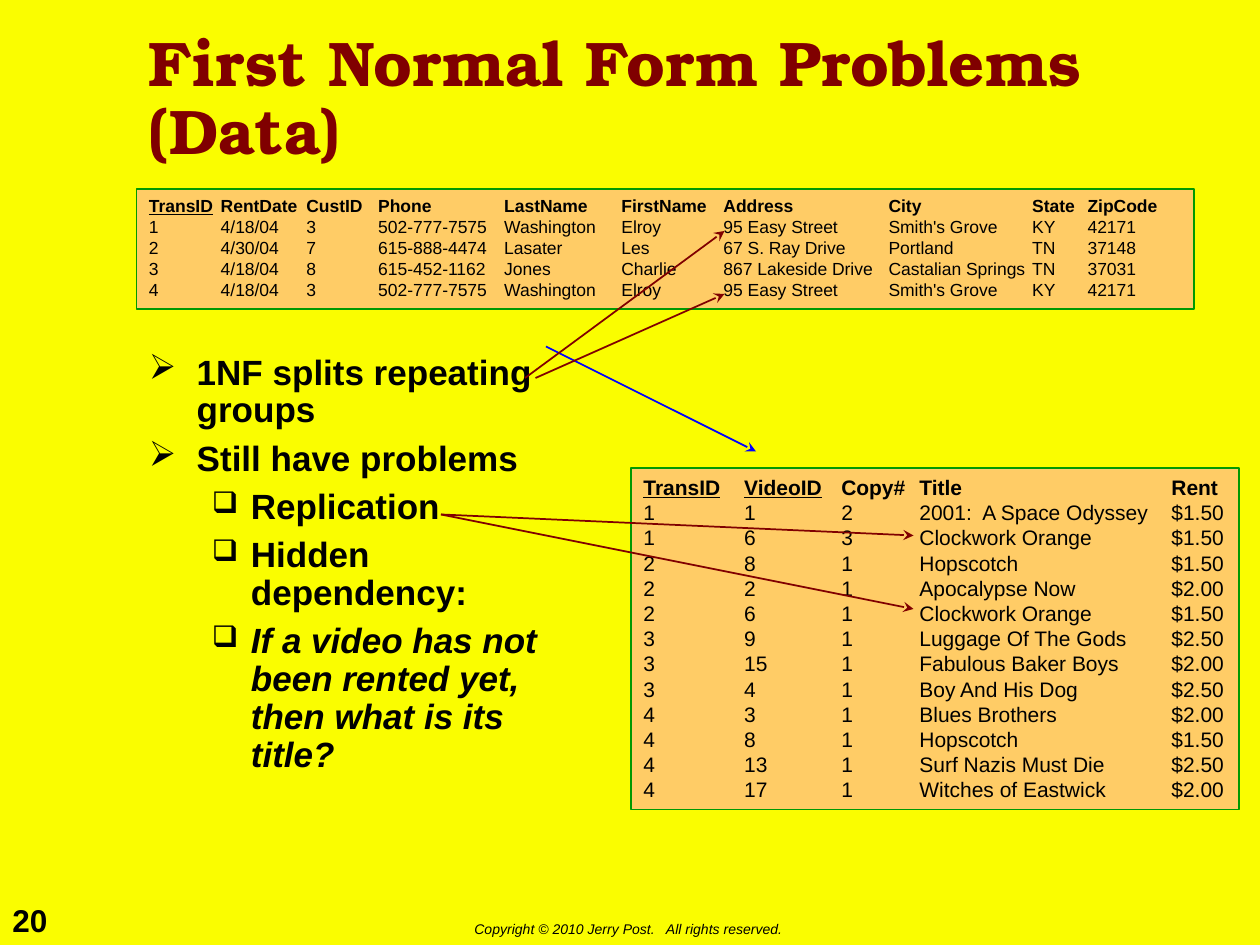
from dataclasses import dataclass

from lxml.etree import SubElement
from pptx import Presentation
from pptx.dml.color import RGBColor
from pptx.enum.shapes import MSO_CONNECTOR as Connector, MSO_SHAPE as Shape
from pptx.enum.text import MSO_ANCHOR as Anchor, MSO_AUTO_SIZE as AutoSize, PP_ALIGN as Align
from pptx.oxml.ns import qn
from pptx.util import Inches, Pt


@dataclass(frozen=True)
class Theme:
    background: str = "FAFD00"
    ink: str = "000000"
    maroon: str = "800000"
    blue: str = "0000FF"
    panel: str = "FFCC66"
    border: str = "009900"
    body_font: str = "Arial"
    title_font: str = "TeX Gyre Bonum"
    title_size: int = 36
    body_size: int = 20
    number_size: int = 18
    rentals_size: int = 10
    videos_size: int = 12
    copyright_size: int = 8


THEME = Theme()
CELL = 1 / 12  # the 10 x 7.5 inch slide is a grid of 120 columns and 90 rows

RENTALS = [
    "TransID RentDate CustID Phone LastName FirstName Address City State ZipCode".split(),
    ["1", "4/18/04", "3", "502-777-7575", "Washington", "Elroy", "95 Easy Street", "Smith's Grove", "KY", "42171"],
    ["2", "4/30/04", "7", "615-888-4474", "Lasater", "Les", "67 S. Ray Drive", "Portland", "TN", "37148"],
    ["3", "4/18/04", "8", "615-452-1162", "Jones", "Charlie", "867 Lakeside Drive", "Castalian Springs", "TN", "37031"],
    ["4", "4/18/04", "3", "502-777-7575", "Washington", "Elroy", "95 Easy Street", "Smith's Grove", "KY", "42171"],
]
RENTAL_TABS = [0.57, 1.25, 1.82, 2.82, 3.75, 4.56, 5.87, 7.01, 7.45]

VIDEOS = [
    ["TransID", "VideoID", "Copy#", "Title", "Rent"],
    ["1", "1", "2", "2001:  A Space Odyssey", "$1.50"],
    ["1", "6", "3", "Clockwork Orange", "$1.50"],
    ["2", "8", "1", "Hopscotch", "$1.50"],
    ["2", "2", "1", "Apocalypse Now", "$2.00"],
    ["2", "6", "1", "Clockwork Orange", "$1.50"],
    ["3", "9", "1", "Luggage Of The Gods", "$2.50"],
    ["3", "15", "1", "Fabulous Baker Boys", "$2.00"],
    ["3", "4", "1", "Boy And His Dog", "$2.50"],
    ["4", "3", "1", "Blues Brothers", "$2.00"],
    ["4", "8", "1", "Hopscotch", "$1.50"],
    ["4", "13", "1", "Surf Nazis Must Die", "$2.50"],
    ["4", "17", "1", "Witches of Eastwick", "$2.00"],
]
VIDEO_TABS = [0.8, 1.57, 2.19, 4.19]

# (level, text, italic)
POINTS = [
    (0, "1NF splits repeating groups", False),
    (0, "Still have problems", False),
    (1, "Replication", False),
    (1, "Hidden dependency:", False),
    (1, "If a video has not been rented yet, then what is its title?", True),
]
# per level: bullet, size in percent, text indent, hanging indent
BULLETS = [("➢", 100, 0.38, 0.38), ("❑", 85, 0.81, 0.31)]


def grid(*cells):
    return [Inches(cell * CELL) for cell in cells]


def style(run, size, color=THEME.ink, name=THEME.body_font, bold=False, italic=False, underline=False):
    font = run.font
    font.name, font.size = name, Pt(size)
    font.bold, font.italic, font.underline = bold, italic, underline
    font.color.rgb = RGBColor.from_string(color)


def add_label(slide, box, text, size, wrap=False, **look):
    """One-paragraph text box."""
    label = slide.shapes.add_textbox(*grid(*box))
    frame = label.text_frame
    frame.word_wrap = wrap
    frame.text = text
    style(frame.paragraphs[0].runs[0], size, **look)
    return frame


def add_title(slide, box):
    frame = add_label(slide, box, "First Normal Form Problems (Data)", THEME.title_size, wrap=True,
                      color=THEME.maroon, name=THEME.title_font, bold=True)
    frame.vertical_anchor = Anchor.MIDDLE
    frame.paragraphs[0].line_spacing = 0.9


def add_listing(slide, box, rows, tabs, key_count, size, wrap):
    """Framed listing with tabbed columns; the key headings are underlined."""
    panel = slide.shapes.add_shape(Shape.RECTANGLE, *grid(*box))
    panel.shadow.inherit = False
    panel.fill.solid()
    panel.fill.fore_color.rgb = RGBColor.from_string(THEME.panel)
    panel.line.color.rgb = RGBColor.from_string(THEME.border)
    panel.line.width = Pt(1)
    frame = panel.text_frame
    frame.word_wrap = wrap
    frame.auto_size = AutoSize.SHAPE_TO_FIT_TEXT
    frame.vertical_anchor = Anchor.TOP
    for index, row in enumerate(rows):
        line = frame.paragraphs[0] if index == 0 else frame.add_paragraph()
        tab_list = SubElement(line._p.get_or_add_pPr(), qn("a:tabLst"))
        for tab in tabs:
            SubElement(tab_list, qn("a:tab"), pos=str(Inches(tab)), algn="l")
        line.alignment = Align.LEFT
        if index == 0:
            keys, others = line.add_run(), line.add_run()
            keys.text = "\t".join(row[:key_count])
            others.text = "\t" + "\t".join(row[key_count:])
            style(keys, size, bold=True, underline=True)
            style(others, size, bold=True)
        else:
            line.text = "\t".join(row)
            style(line.runs[0], size)


def add_points(slide, box):
    """Two-level bulleted list."""
    frame = slide.shapes.add_textbox(*grid(*box)).text_frame
    frame.word_wrap = True
    for index, (level, text, italic) in enumerate(POINTS):
        point = frame.paragraphs[0] if index == 0 else frame.add_paragraph()
        bullet, percent, indent, hanging = BULLETS[level]
        point.text = text
        point.level = level
        props = point._p.get_or_add_pPr()
        props.set("marL", str(Inches(indent)))
        props.set("indent", str(-Inches(hanging)))
        SubElement(SubElement(props, qn("a:buClr")), qn("a:srgbClr"), val=THEME.ink)
        SubElement(props, qn("a:buSzPct"), val=str(percent * 1000))
        SubElement(props, qn("a:buChar"), char=bullet)
        point.line_spacing = 0.9
        if index:
            point.space_before = Pt(0.3 * THEME.body_size)
        style(point.runs[0], THEME.body_size, bold=True, italic=italic)


def add_arrow(slide, start, end, color):
    arrow = slide.shapes.add_connector(Connector.STRAIGHT, *grid(*start, *end))
    arrow.line.color.rgb = RGBColor.from_string(color)
    arrow.line.width = Pt(1)
    SubElement(arrow.line._get_or_add_ln(), qn("a:tailEnd"), type="stealth")
    SubElement(arrow._element.spPr, qn("a:effectLst"))


def add_footer(slide, number_box, copyright_box):
    add_label(slide, number_box, "20", THEME.number_size, bold=True)
    add_label(slide, copyright_box, "Copyright © 2010 Jerry Post.   All rights reserved.",
              THEME.copyright_size, italic=True)


def main():
    deck = Presentation()
    deck.slide_width, deck.slide_height = grid(120, 90)
    slide = deck.slides.add_slide(deck.slide_layouts[6])
    slide.background.fill.solid()
    slide.background.fill.fore_color.rgb = RGBColor.from_string(THEME.background)

    add_footer(slide, (0, 85.2, 6, 4.8), (44, 87.1, 32.2, 2.9))
    add_title(slide, (13, 2, 94, 15))
    add_listing(slide, (13, 18, 100.7, 11.4), RENTALS, RENTAL_TABS, 1, THEME.rentals_size, wrap=True)
    add_listing(slide, (60.1, 44.6, 57.9, 32.5), VIDEOS, VIDEO_TABS, 2, THEME.videos_size, wrap=False)
    add_points(slide, (13, 33.2, 39.6, 49.8))

    # Link between the two listings
    add_arrow(slide, (52, 33), (72, 43), THEME.blue)
    # Replicated titles and addresses
    for start, end in [((42, 49), (87, 51)), ((42, 49), (87, 58)),
                       ((50, 36), (69, 22)), ((51, 36), (69, 28))]:
        add_arrow(slide, start, end, THEME.maroon)

    deck.save("out.pptx")


if __name__ == "__main__":
    main()
